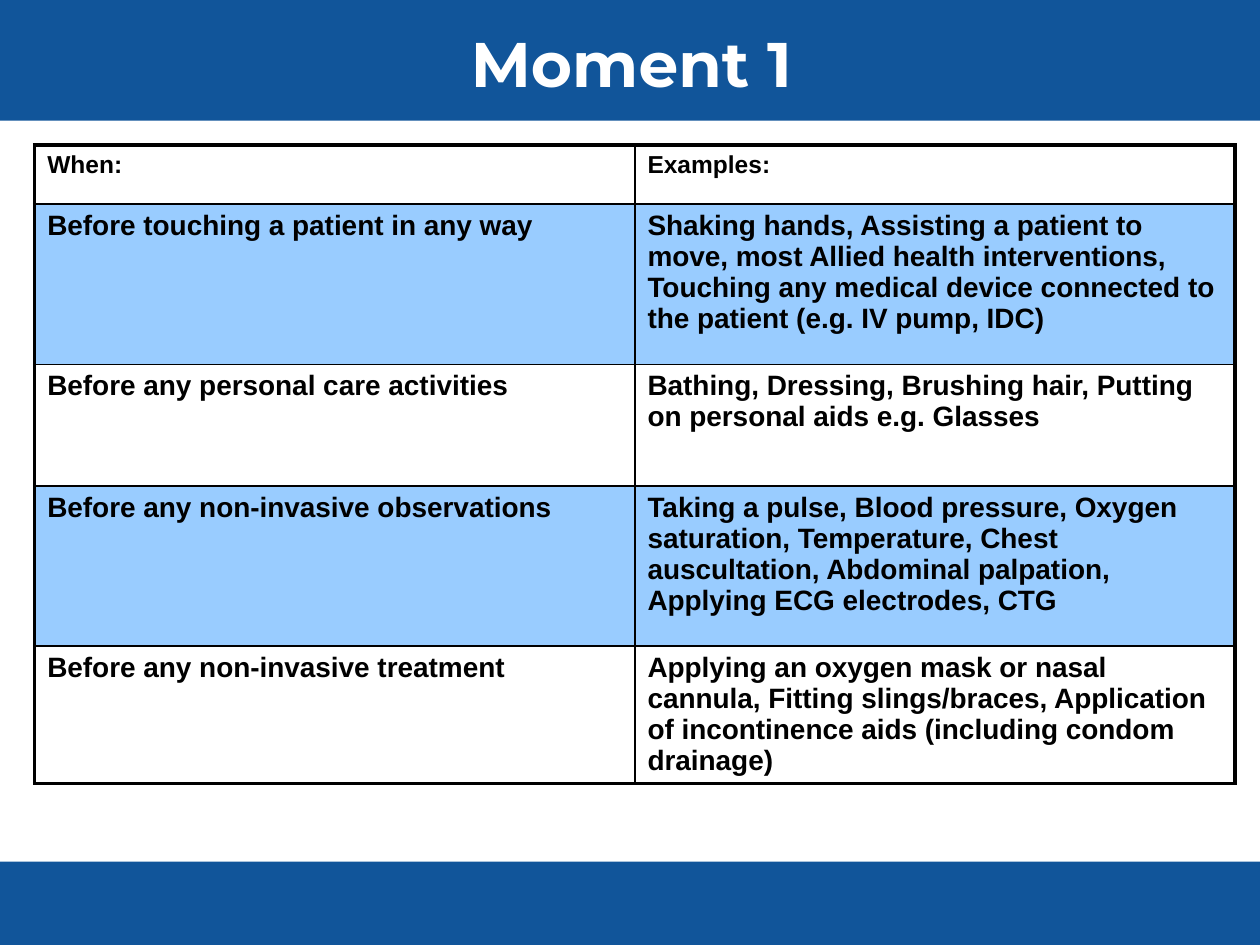
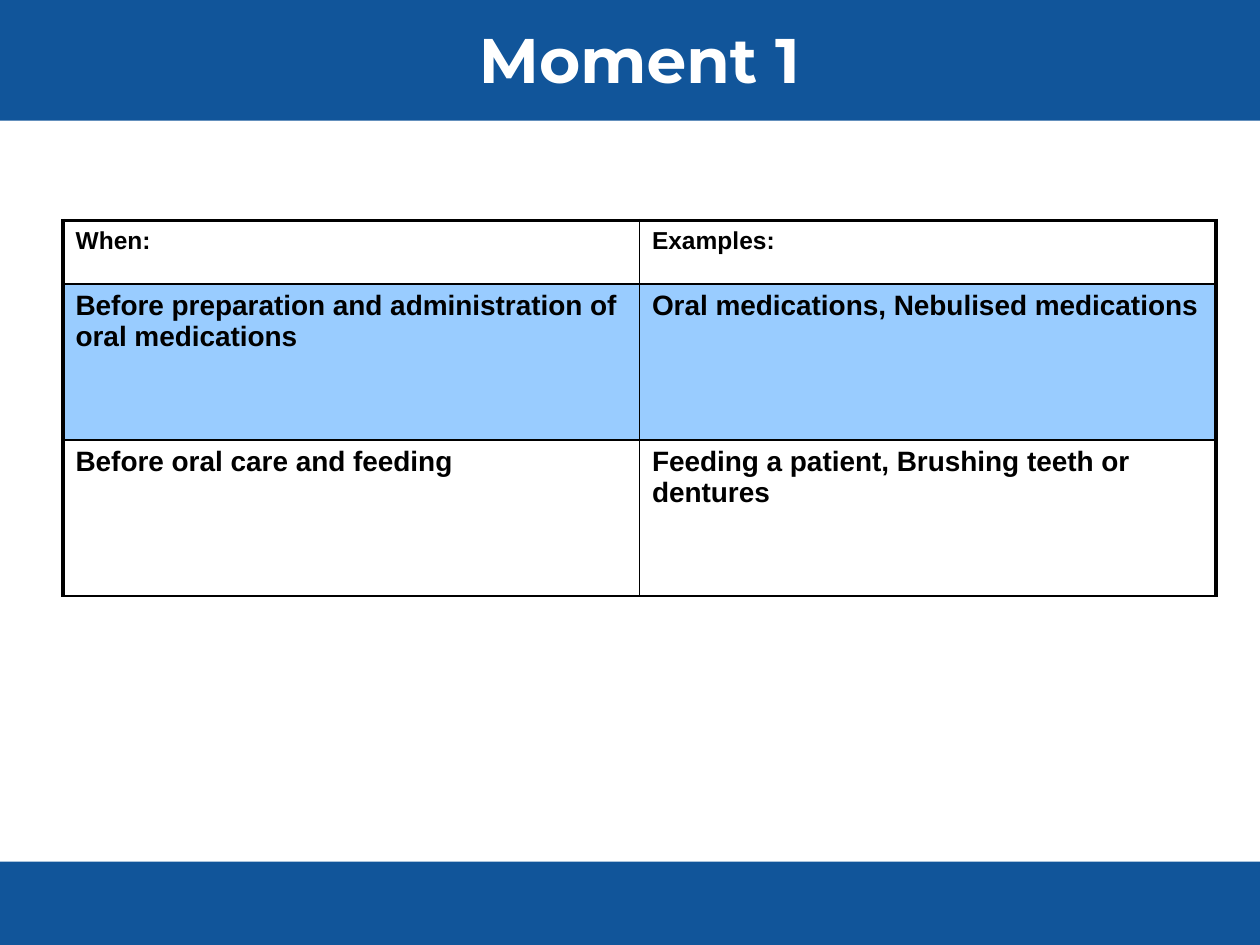
from lxml.etree import SubElement
from pptx import Presentation
from pptx.dml.color import RGBColor
from pptx.enum.shapes import MSO_SHAPE
from pptx.enum.text import MSO_ANCHOR, PP_ALIGN
from pptx.oxml.ns import qn
from pptx.util import Pt

WIDTH, HEIGHT = 720, 540
BAND_BLUE, ROW_BLUE, WHITE, BLACK = "11559A", "99CCFF", "FFFFFF", "000000"
THICK, THIN = 2.25, 1
HEADER = ("When:", "Examples:")

TOUCHING_ROWS = [
    ("Before touching a patient in any way",
     "Shaking hands, Assisting a patient to move, most Allied health interventions, "
     "Touching any medical device connected to the patient (e.g. IV pump, IDC)"),
    ("Before any personal care activities",
     "Bathing, Dressing, Brushing hair, Putting on personal aids e.g. Glasses"),
    ("Before any non-invasive observations",
     "Taking a pulse, Blood pressure, Oxygen saturation, Temperature, "
     "Chest auscultation, Abdominal palpation, Applying ECG electrodes, CTG"),
    ("Before any non-invasive treatment",
     "Applying an oxygen mask or nasal cannula, Fitting slings/braces, "
     "Application of incontinence aids (including condom drainage)"),
]
ORAL_ROWS = [
    ("Before preparation and administration of oral medications",
     "Oral medications, Nebulised medications"),
    ("Before oral care and feeding",
     "Feeding a patient, Brushing teeth or dentures"),
]


def color(hex_string):
    return RGBColor.from_string(hex_string)


def format_text(paragraph, font_name, size, text_color):
    for run in paragraph.runs:
        run.font.name = font_name
        run.font.size = Pt(size)
        run.font.bold = True
        run.font.color.rgb = color(text_color)


def add_layout_band(slide, top, height):
    """Draw a full-width band and move it to the back of the slide's layout."""
    band = slide.shapes.add_shape(
        MSO_SHAPE.RECTANGLE, Pt(0), Pt(top), Pt(WIDTH), Pt(height))
    band.shadow.inherit = False
    band.fill.solid()
    band.fill.fore_color.rgb = color(BAND_BLUE)
    band.line.fill.background()
    slide.slide_layout.shapes.element.insert(2, band.element)


def set_title(slide, text, left, width, height):
    title = slide.shapes.title
    title.left, title.top, title.width, title.height = Pt(left), Pt(0), Pt(width), Pt(height)
    text_frame = title.text_frame
    text_frame.text = text
    text_frame.vertical_anchor = MSO_ANCHOR.MIDDLE
    text_frame.paragraphs[0].alignment = PP_ALIGN.CENTER
    format_text(text_frame.paragraphs[0], "Montserrat", 36, WHITE)


def set_borders(cell, widths):
    """Add the borders, given in the order left, right, top, bottom."""
    properties = cell._tc.get_or_add_tcPr()
    for side, width in zip("LRTB", widths):
        line = SubElement(properties, qn(f"a:ln{side}"), w=str(int(Pt(width))))
        fill = SubElement(line, qn("a:solidFill"))
        SubElement(fill, qn("a:srgbClr"), val=BLACK)


def add_moment_table(slide, left, top, width, row_heights, rows, bottom_border):
    rows = [HEADER] + rows
    frame = slide.shapes.add_table(
        len(rows), 2, Pt(left), Pt(top), Pt(width), Pt(sum(row_heights)))
    table = frame.table
    table.first_row = table.horz_banding = False
    for column in table.columns:
        column.width = Pt(width / 2)
    for row_index, (texts, height) in enumerate(zip(rows, row_heights)):
        table.rows[row_index].height = Pt(height)
        is_header, is_last = row_index == 0, row_index == len(rows) - 1
        for column_index, text in enumerate(texts):
            cell = table.cell(row_index, column_index)
            # Borders come before the fill in the cell properties
            set_borders(cell, (
                THIN if column_index else THICK,
                THICK if column_index else THIN,
                THICK if is_header else THIN,
                bottom_border if is_last else THIN))
            if row_index % 2:
                cell.fill.solid()
                cell.fill.fore_color.rgb = color(ROW_BLUE)
            else:
                cell.fill.background()
            cell.text_frame.text = text
            format_text(cell.text_frame.paragraphs[0], "Arial", 14 if is_header else 16, BLACK)


def main():
    presentation = Presentation()
    presentation.slide_width, presentation.slide_height = Pt(WIDTH), Pt(HEIGHT)
    layout = presentation.slide_layouts[5]

    # Touching, care, observations and treatment
    slide = presentation.slides.add_slide(layout)
    add_layout_band(slide, 0, 69)
    add_layout_band(slide, 492.3, HEIGHT - 492.3)
    set_title(slide, "Moment 1", 36.8, 648, 71.3)
    add_moment_table(slide, 19.8, 82.8, 686, [33.8, 91.6, 69.5, 91.6, 78.6],
                     TOUCHING_ROWS, THICK)

    # Oral medication, care and feeding
    slide = presentation.slides.add_slide(layout)
    set_title(slide, "Moment 1", 36, 658.8, 66.2)
    add_moment_table(slide, 36, 126, 658.8, [36.2, 89.2, 89.2], ORAL_ROWS, THIN)

    presentation.save("out.pptx")


if __name__ == "__main__":
    main()
